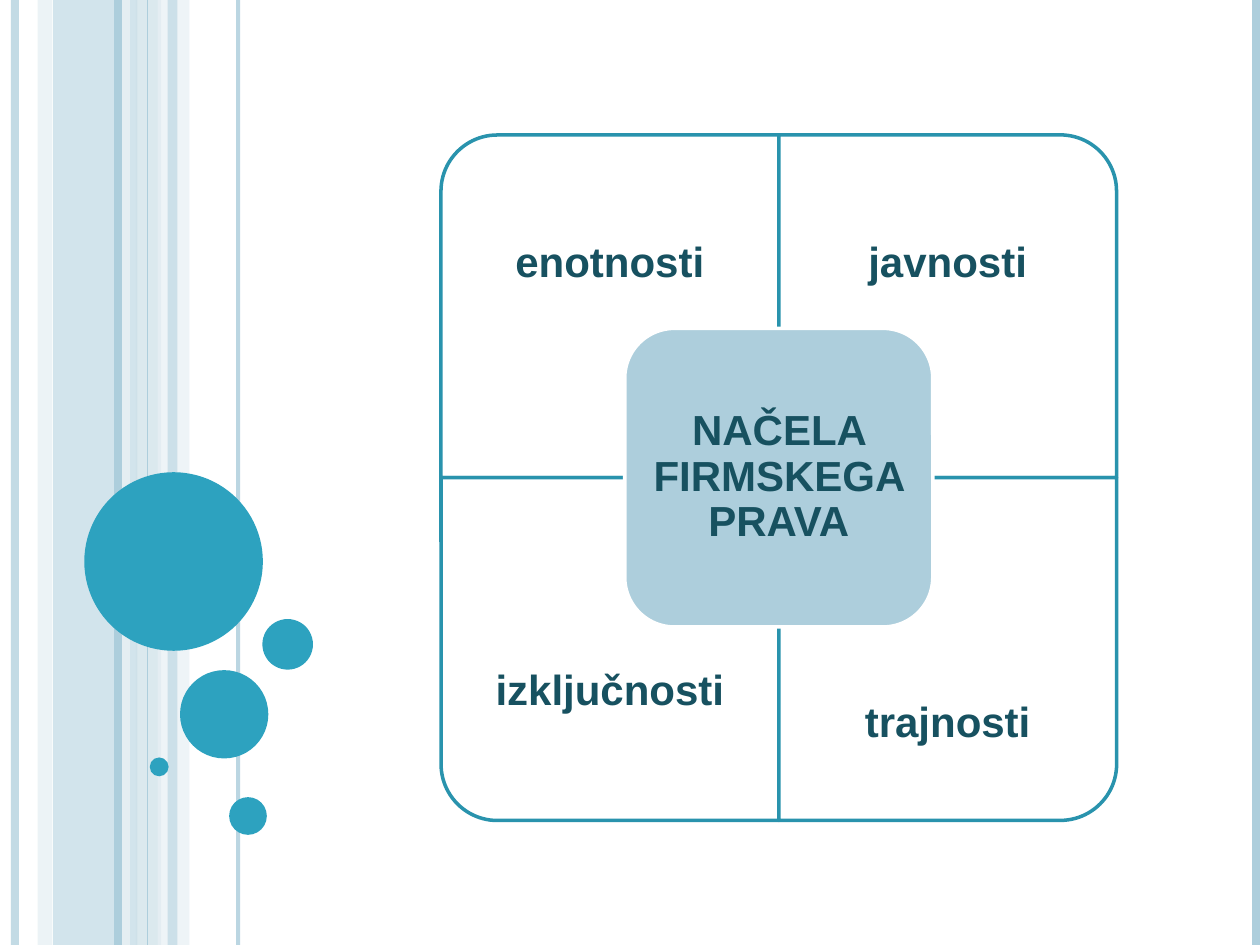
import pptx
import pptx.util
import pptx.dml.color
import pptx.enum.shapes
import pptx.enum.text
import pptx.oxml.ns

Cm, Pt, qn = pptx.util.Cm, pptx.util.Pt, pptx.oxml.ns.qn
SHAPE = pptx.enum.shapes.MSO_SHAPE
WIDTH, HEIGHT = 25.4, 19.05
PALE, MIST, ICE = "ADCEDC", "CDE0E8", "E8F0F4"
TEAL, EDGE, INK, WHITE = "2DA2BF", "2993AD", "175160", "FFFFFF"


def paint(fmt, color, alpha=100):
    """Give a fill a solid colour and an opacity in percent."""
    fmt.solid()
    fmt.fore_color.rgb = pptx.dml.color.RGBColor.from_string(color)
    if alpha < 100:
        clr = fmt._xPr.find(qn("a:solidFill"))[0]
        clr.append(clr.makeelement(qn("a:alpha"), {"val": str(alpha * 1000)}))


def add_shape(s, kind, x, y, w, h, fill, alpha=100, line=None):
    """Add a preset shape with a plain fill and an optional outline."""
    sp = s.shapes.add_shape(kind, Cm(x), Cm(y), Cm(w), Cm(h))
    sp.shadow.inherit = False
    paint(sp.fill, fill, alpha)
    if line:
        paint(sp.line.fill, line)
        sp.line.width = Pt(2)
    else:
        sp.line.fill.background()
    return sp


def add_stripe(s, x, y, h, width, alpha=100, color=PALE):
    """Add a vertical line of the given width in points."""
    c = s.shapes.add_connector(
        pptx.enum.shapes.MSO_CONNECTOR.STRAIGHT, Cm(x), Cm(y), Cm(x), Cm(y + h))
    paint(c.line.fill, color, alpha)
    c.line.width = Pt(width)
    props = c._element.spPr
    props.append(props.makeelement(qn("a:effectLst"), {}))


def write(sp, text, size=24, color=INK, bold=True, font="Arial", inset=0.2):
    """Write one centred paragraph into a shape."""
    tf = sp.text_frame
    tf.word_wrap = True
    tf.vertical_anchor = pptx.enum.text.MSO_ANCHOR.MIDDLE
    tf.margin_left = tf.margin_right = tf.margin_top = tf.margin_bottom = Cm(inset)
    p = tf.paragraphs[0]
    p.alignment = pptx.enum.text.PP_ALIGN.CENTER
    p.line_spacing = 0.9
    r = p.add_run()
    r.text = text
    r.font.name, r.font.size, r.font.bold = font, Pt(size), bold
    paint(r.font.fill, color)


def draw_bands(s, x, y, w, h):
    """Draw the translucent bands and lines along both slide edges."""
    for dx, width, color, alpha in ((1.07, 1.7, PALE, 54), (0.76, 0.3, MIST, 36),
                                    (2.74, 0.51, MIST, 70), (3.18, 0.64, ICE, 71)):
        add_shape(s, SHAPE.RECTANGLE, x + dx, y, width, h, color, alpha)
    add_stripe(s, x + 0.3, y, h, 4.5, 73)
    add_stripe(s, x + 2.54, y, h, 4.5, 83, ICE)
    add_stripe(s, x + 2.38, y, h, 4.5)
    add_stripe(s, x + 4.8, y, h, 2.25, 82)
    add_stripe(s, x + 2.97, y, h, 0.75)
    add_stripe(s, x + w - 0.08, y, h, 4.5)
    add_shape(s, SHAPE.RECTANGLE, x + 3.38, y, 0.2, h, PALE, 51)


def draw_bubbles(s, x, y):
    """Draw the cluster of circles from its top left corner."""
    for dx, dy, d in ((0, 0, 3.6), (1.93, 3.99, 1.78), (1.32, 5.75, 0.38),
                      (2.92, 6.55, 0.76), (3.59, 2.96, 1.02)):
        add_shape(s, SHAPE.OVAL, x + dx, y + dy, d, d, TEAL)


def draw_matrix(s, x, y, w, h):
    """Draw four labelled quadrants around a central title."""
    qw, qh = w / 2, h / 2
    quadrants = (("enotnosti", 0, 0, 270, 0), ("javnosti", 1, 0, 0, 0),
                 ("izključnosti", 0, 1, 180, 0), ("trajnosti", 1, 1, 90, 0.64))
    for text, col, row, angle, drop in quadrants:
        left, top = x + col * qw, y + row * qh
        sw, sh = (qh, qw) if angle % 180 else (qw, qh)
        sp = add_shape(s, SHAPE.ROUND_1_RECTANGLE, left + (qw - sw) / 2,
                       top + (qh - sh) / 2, sw, sh, WHITE, line=EDGE)
        sp.rotation = angle
        label = s.shapes.add_textbox(Cm(left), Cm(top + row * qh / 4 + drop),
                                     Cm(qw), Cm(qh * 0.75))
        write(label, text, inset=0.48)
    cw, ch = 6.21, 6.02
    sp = add_shape(s, SHAPE.ROUNDED_RECTANGLE, x + (w - cw) / 2, y + (h - ch) / 2,
                   cw, ch, PALE, line=WHITE)
    write(sp, "NAČELA FIRMSKEGA PRAVA")


def main():
    """Build the slide and save it."""
    prs = pptx.Presentation()
    prs.slide_width, prs.slide_height = Cm(WIDTH), Cm(HEIGHT)
    s = prs.slides.add_slide(prs.slide_layouts[6])
    draw_bands(s, 0, 0, WIDTH, HEIGHT)
    draw_bubbles(s, 1.7, 9.52)
    draw_matrix(s, 8.89, 2.72, 13.62, 13.82)
    prs.save("out.pptx")


if __name__ == "__main__":
    main()
